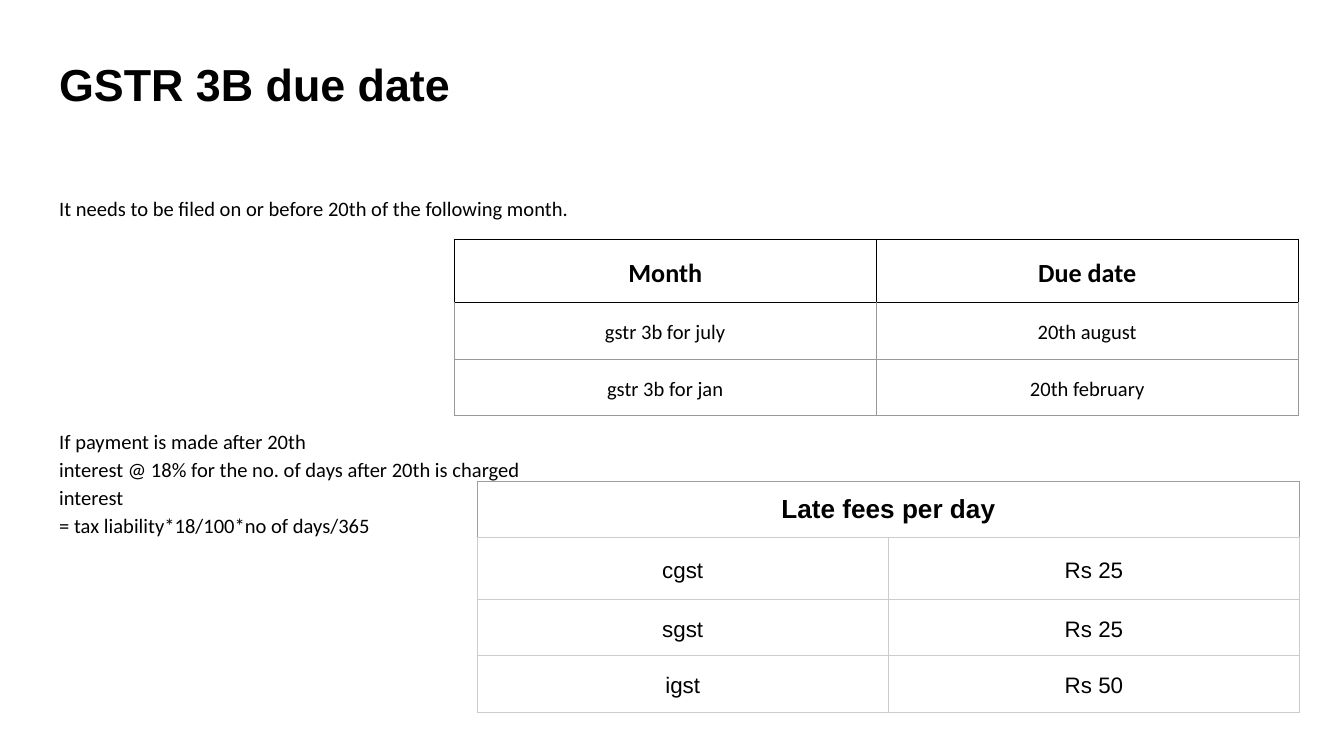
from lxml.etree import SubElement
from pptx import Presentation
from pptx.dml.color import RGBColor
from pptx.enum.text import MSO_ANCHOR, MSO_AUTO_SIZE, PP_ALIGN
from pptx.oxml.ns import qn
from pptx.util import Inches, Pt

BLACK = "000000"
GREY = "999999"
MID_GREY = "9E9E9E"
LIGHT_GREY = "CCCCCC"
BODY_LINES = [
    "It needs to be filed on or before 20th of the following month.",
    "If payment is made after 20th",
    "interest @ 18% for the no. of days after 20th is charged",
    "interest",
    "= tax liability*18/100*no of days/365",
]
DUE_DATES = [
    ("Month", "Due date"),
    ("gstr 3b for july", "20th august"),
    ("gstr 3b for jan", "20th february"),
]
LATE_FEES = [
    ("Late fees per day", ""),
    ("cgst", "Rs 25"),
    ("sgst", "Rs 25"),
    ("igst", "Rs 50"),
]


def color(value):
    return RGBColor.from_string(value)


def format_paragraph(paragraph, font_name, size, bold=False, align=PP_ALIGN.LEFT, spacing=1.15):
    paragraph.alignment = align
    paragraph.line_spacing = spacing
    paragraph.space_before = Pt(0)
    for run in paragraph.runs:
        run.font.name = font_name
        run.font.size = Pt(size)
        run.font.bold = bold
        run.font.color.rgb = color(BLACK)


def fill_placeholder(shape, text, left, top, width, height):
    shape.left, shape.top = Inches(left), Inches(top)
    shape.width, shape.height = Inches(width), Inches(height)
    frame = shape.text_frame
    frame.text = text
    frame.word_wrap = True
    frame.auto_size = MSO_AUTO_SIZE.NONE
    frame.vertical_anchor = MSO_ANCHOR.TOP
    frame.margin_left = frame.margin_right = Inches(0.1)
    frame.margin_top = frame.margin_bottom = Inches(0.1)
    return frame.paragraphs


def remove_bullet(paragraph):
    properties = paragraph._p.get_or_add_pPr()
    properties.set("marL", "0")
    properties.set("indent", "0")
    SubElement(properties, qn("a:buNone"))


def set_borders(cell, left, right, top, bottom):
    properties = cell._tc.get_or_add_tcPr()
    for side, value in zip("LRTB", (left, right, top, bottom)):
        line = SubElement(properties, qn(f"a:ln{side}"), w=str(Pt(0.75)))
        solid_fill = SubElement(line, qn("a:solidFill"))
        SubElement(solid_fill, qn("a:srgbClr"), val=value)


def add_grid(slide, rows, left, top, column_width, row_heights, font_name, body_size,
             header_colors, body_color, side_margins):
    column_count = len(rows[0])
    table = slide.shapes.add_table(
        len(rows), column_count, Inches(left), Inches(top),
        Inches(column_width * column_count), Inches(sum(row_heights)),
    ).table
    table.first_row = False
    table.horz_banding = False
    for column in table.columns:
        column.width = Inches(column_width)
    header_side, header_bottom = header_colors
    for row_index, (values, height) in enumerate(zip(rows, row_heights)):
        table.rows[row_index].height = Inches(height)
        is_header = row_index == 0
        side = header_side if is_header else body_color
        above = header_side if is_header else header_bottom if row_index == 1 else body_color
        below = header_bottom if is_header else body_color
        for column_index, value in enumerate(values):
            cell = table.cell(row_index, column_index)
            cell.text = value
            cell.vertical_anchor = MSO_ANCHOR.MIDDLE
            cell.margin_left = cell.margin_right = Inches(side_margins[row_index])
            cell.margin_top = cell.margin_bottom = Inches(0.1)
            format_paragraph(cell.text_frame.paragraphs[0], font_name,
                             14 if is_header else body_size, is_header, PP_ALIGN.CENTER)
            set_borders(cell, side, side, above, below)
            cell.fill.background()
    return table


def add_title(slide):
    paragraphs = fill_placeholder(slide.shapes.title, "GSTR 3B due date", 0.34, 0.32, 9.32, 0.88)
    format_paragraph(paragraphs[0], "Arial", 24, True, spacing=1.0)


def add_body(slide):
    paragraphs = fill_placeholder(slide.placeholders[1], "\n".join(BODY_LINES), 0.34, 1.33, 9.32, 3.65)
    for paragraph in paragraphs:
        format_paragraph(paragraph, "Calibri", 11)
        remove_bullet(paragraph)
    paragraphs[1].space_before = Pt(109.5)


def main():
    presentation = Presentation()
    presentation.slide_width = Inches(10)
    presentation.slide_height = Inches(10 * 9 / 16)
    slide = presentation.slides.add_slide(presentation.slide_layouts[1])
    add_title(slide)
    add_body(slide)
    add_grid(slide, DUE_DATES, 3.38, 1.78, 3.14, [0.47, 0.42, 0.42], "Calibri", 11,
             (BLACK, BLACK), GREY, [0.03, 0.1, 0.1])
    late_fees = add_grid(slide, LATE_FEES, 3.55, 3.58, 3.06, [0.42, 0.46, 0.42, 0.42], "Arial", 12,
                         (MID_GREY, LIGHT_GREY), LIGHT_GREY, [0.1, 0.03, 0.03, 0.03])
    header = late_fees.cell(0, 0)
    header.merge(late_fees.cell(0, 1))
    header.vertical_anchor = MSO_ANCHOR.TOP
    header.text_frame.paragraphs[0].line_spacing = 1.0
    presentation.save("out.pptx")


if __name__ == "__main__":
    main()
